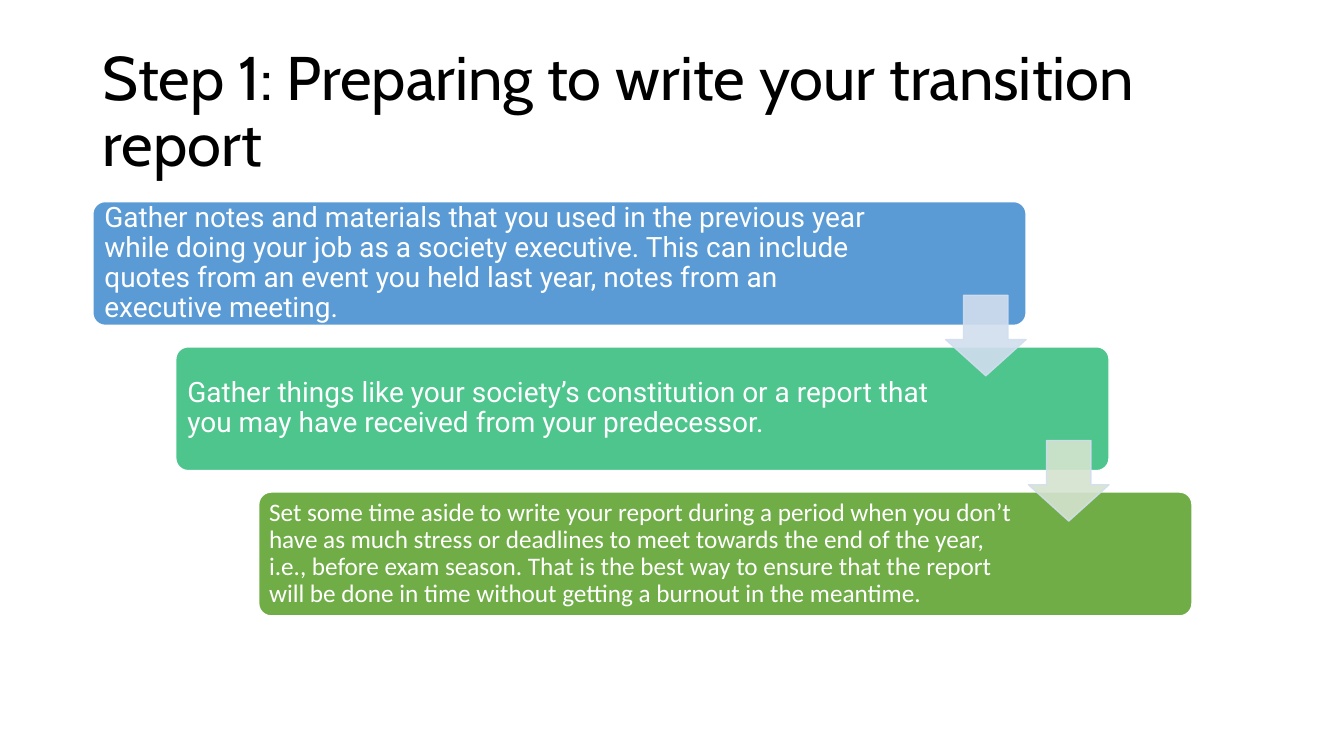
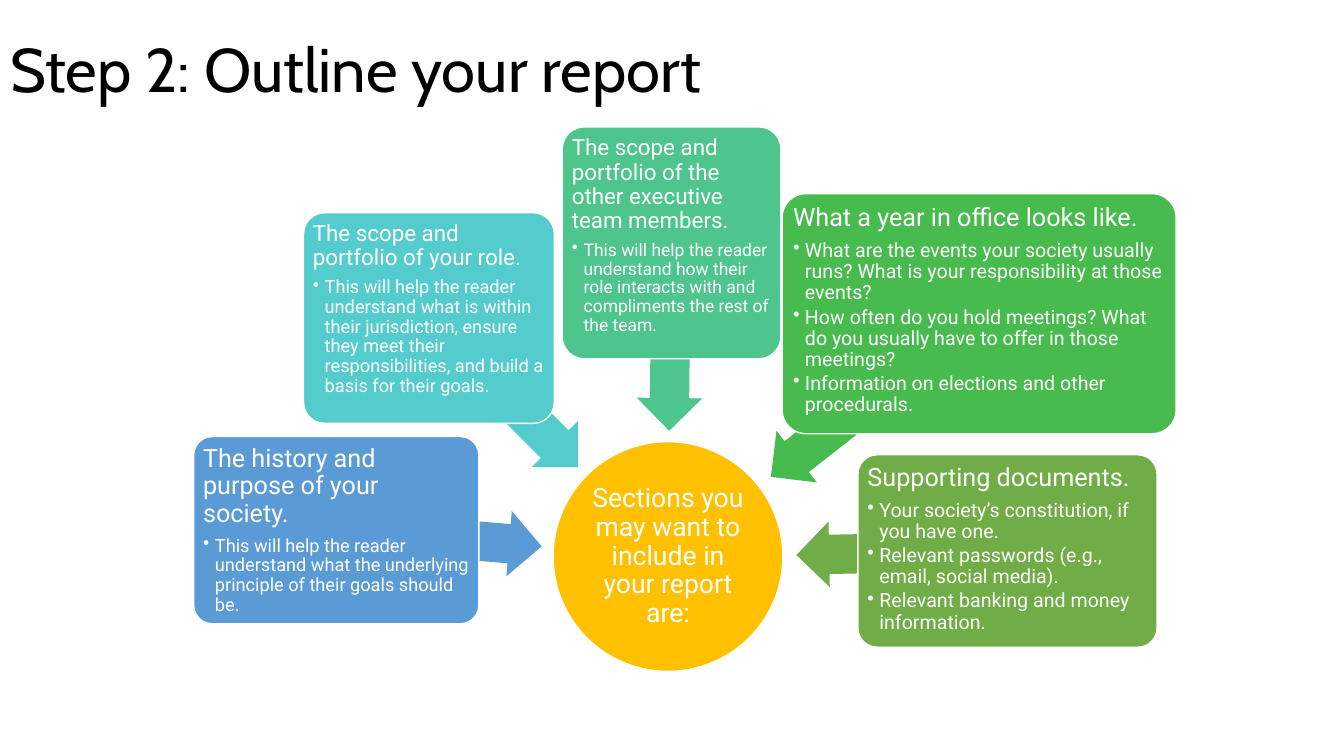
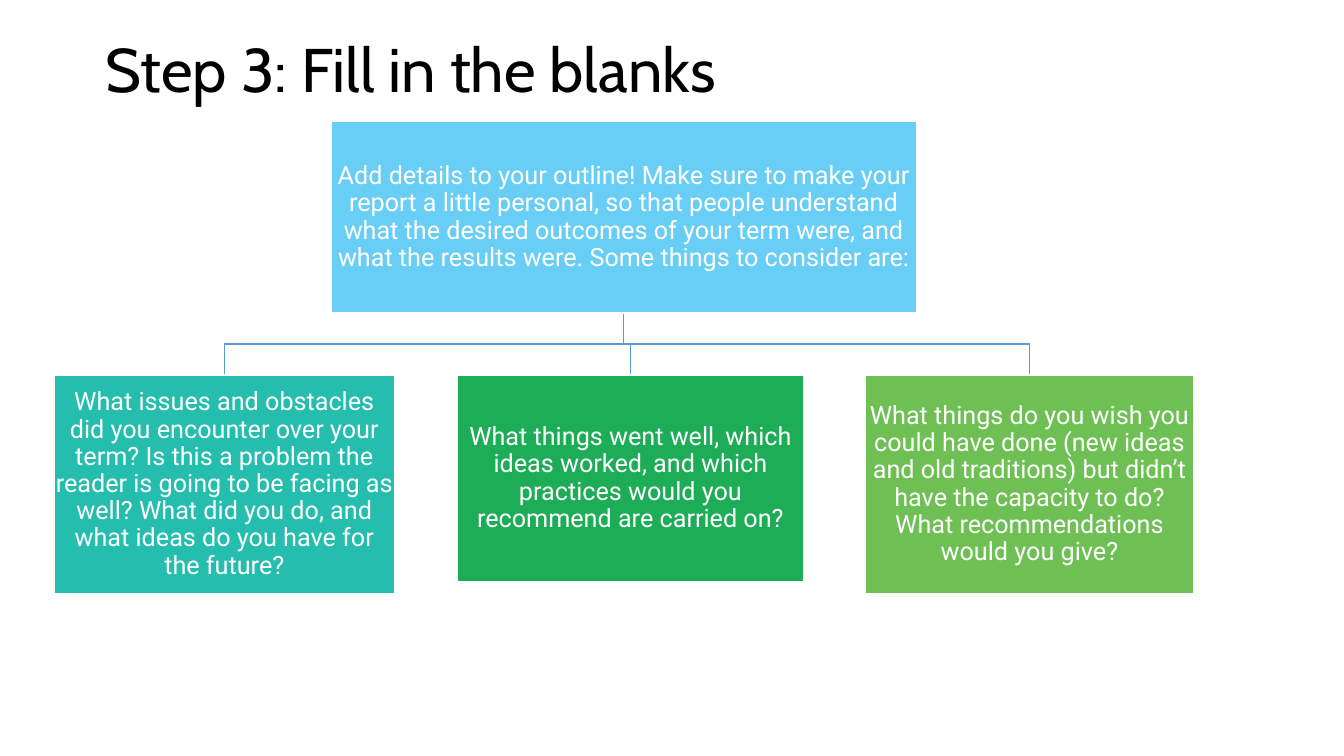
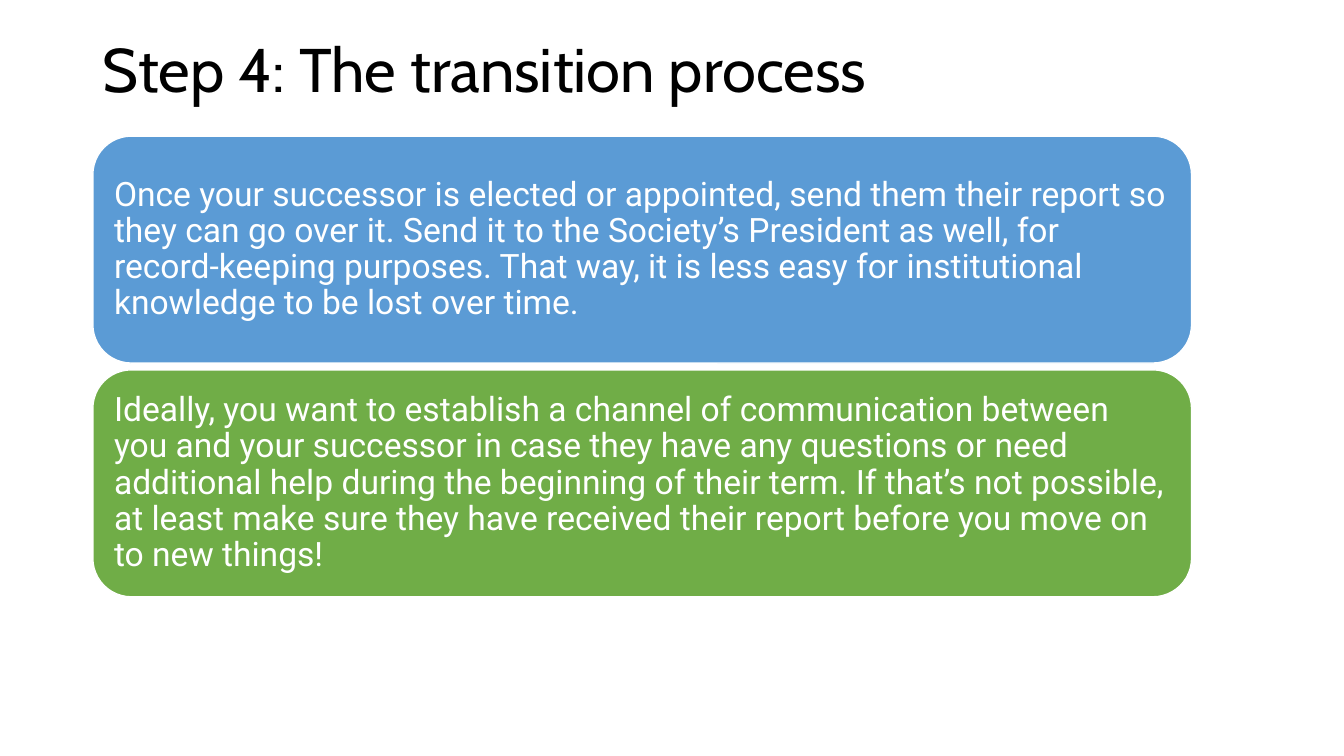
from dataclasses import dataclass
from typing import Any

from lxml import etree
from pptx import Presentation
from pptx.dml.color import RGBColor
from pptx.enum import shapes, text
from pptx.oxml import ns
from pptx.util import Cm, Pt

# Shared colours, fonts and formats
WHITE = RGBColor(0xFF, 0xFF, 0xFF)
BLACK = RGBColor(0x00, 0x00, 0x00)
BLUE = RGBColor(0x5B, 0x9B, 0xD5)
CYAN = RGBColor(0x54, 0xCC, 0xCD)
MINT = RGBColor(0x4D, 0xC5, 0x8D)
GREEN = RGBColor(0x48, 0xBB, 0x4F)
OLIVE = RGBColor(0x70, 0xAD, 0x47)
GOLD = RGBColor(0xFF, 0xC0, 0x00)
SKY = RGBColor(0x69, 0xCE, 0xF6)
TEAL = RGBColor(0x25, 0xBD, 0xAD)
LEAF = RGBColor(0x1D, 0xAD, 0x57)
LIME = RGBColor(0x6F, 0xC0, 0x54)
PALE = RGBColor(0xD2, 0xDE, 0xEF)
SAGE = RGBColor(0xD5, 0xE3, 0xCF)

HEAD, BODY, PLAIN = "Cabin", "Roboto", "Calibri"
KIND = shapes.MSO_SHAPE
LEFT, MID = text.PP_ALIGN.LEFT, text.PP_ALIGN.CENTER
TOP, CORE = text.MSO_ANCHOR.TOP, text.MSO_ANCHOR.MIDDLE
EDGE, WIDE = 2.34, 27.69
SHARE = 0.9


@dataclass
class Box:
    """A filled shape with text; lengths in cm, sizes in points."""
    left: float
    top: float
    width: float
    height: float
    fill: RGBColor
    words: str
    size: float = 18
    kind: Any = KIND.ROUNDED_RECTANGLE
    round: float | None = 0.1
    font: str = BODY
    align: Any = LEFT
    anchor: Any = CORE
    inset: float = 0.1
    right: float | None = None
    edge: float = 1
    items: tuple[str, ...] = ()
    small: float = 14


@dataclass
class Arrow:
    """A block arrow without text; lengths in cm, turn in degrees."""
    left: float
    top: float
    width: float
    height: float
    fill: RGBColor
    kind: Any = KIND.LEFT_ARROW
    shape: tuple[float, float] = (0.6, 0.5)
    turn: float = 0


def put(obj: Any, **vals: Any) -> None:
    for name, val in vals.items():
        setattr(obj, name, val)


def fade(fill: Any) -> None:
    """Make a solid fill slightly transparent."""
    tone = fill._xPr.find(ns.qn("a:solidFill"))[0]
    etree.SubElement(tone, ns.qn("a:alpha"), val=str(int(SHARE * 100000)))


def dot(para: Any) -> None:
    """Give a paragraph a hanging bullet."""
    para.level = 1
    props = para._p.get_or_add_pPr()
    props.set("marL", str(Cm(0.3)))
    props.set("indent", str(-Cm(0.3)))
    etree.SubElement(props, ns.qn("a:buChar"), char="•")


def write(para: Any, words: str, size: float, font: str, align: Any,
          color: RGBColor, after: float) -> None:
    put(para, alignment=align, line_spacing=0.9, space_after=Pt(round(size * after, 1)))
    run = para.add_run()
    run.text = words
    put(run.font, name=font, size=Pt(size))
    run.font.color.rgb = color


def shape(slide: Any, item: Box | Arrow) -> Any:
    area = [Cm(v) for v in (item.left, item.top, item.width, item.height)]
    form = slide.shapes.add_shape(item.kind, *area)
    form.shadow.inherit = False
    form.fill.solid()
    form.fill.fore_color.rgb = item.fill
    return form


def draw_box(slide: Any, box: Box) -> None:
    form = shape(slide, box)
    if box.round is not None:
        form.adjustments[0] = box.round
    form.line.color.rgb = WHITE
    form.line.width = Pt(box.edge)
    frame = form.text_frame
    pad = Cm(box.inset)
    side = pad if box.right is None else Cm(box.right)
    put(frame, word_wrap=True, vertical_anchor=box.anchor, margin_left=pad,
        margin_top=pad, margin_bottom=pad, margin_right=side)
    write(frame.paragraphs[0], box.words, box.size, box.font, box.align, WHITE, 0.35)
    for item in box.items:
        para = frame.add_paragraph()
        dot(para)
        write(para, item, box.small, box.font, box.align, WHITE, 0.15)


def draw_arrow(slide: Any, arrow: Arrow) -> Any:
    form = shape(slide, arrow)
    form.adjustments[0], form.adjustments[1] = arrow.shape
    form.rotation = arrow.turn
    form.line.fill.background()
    return form


def draw_link(slide: Any, root: Box, leaf: Box) -> None:
    """Draw a stepped line from under one box to the top of another."""
    start, end = root.left + root.width / 2, leaf.left + leaf.width / 2
    base = root.top + root.height
    bend = (base + leaf.top) / 2
    pen = slide.shapes.build_freeform(Cm(start), Cm(base))
    steps = ((start, bend), (end, bend), (end, leaf.top))
    pen.add_line_segments([(Cm(x), Cm(y)) for x, y in steps], close=False)
    form = pen.convert_to_shape()
    form.shadow.inherit = False
    form.fill.background()
    form.line.color.rgb = BLUE
    form.line.width = Pt(1)


def add_slide(deck: Any, words: str, left: float = EDGE, top: float = 0) -> Any:
    slide = deck.slides.add_slide(deck.slide_layouts[5])
    title = slide.shapes.title
    put(title, left=Cm(left), top=Cm(top), width=Cm(WIDE), height=Cm(3.68))
    put(title.text_frame, word_wrap=True, vertical_anchor=CORE,
        auto_size=text.MSO_AUTO_SIZE.NONE)
    write(title.text_frame.paragraphs[0], words, 44, HEAD, LEFT, BLACK, 0)
    return slide


def prepare(deck: Any) -> None:
    slide = add_slide(deck, "Step 1: Preparing to write your transition report", top=1.02)
    steps = (
        (BLUE, 20, BODY, 0.2, 3.4,
         "Gather notes and materials that you used in the previous year while doing your "
         "job as a society executive. This can include quotes from an event you held last "
         "year, notes from an executive meeting."),
        (MINT, 20, BODY, 0.2, 4.3,
         "Gather things like your society’s constitution or a report that you may have "
         "received from your predecessor."),
        (OLIVE, 18, PLAIN, 0.17, 4.27,
         "Set some time aside to write your report during a period when you don’t have as "
         "much stress or deadlines to meet towards the end of the year, i.e., before exam "
         "season. That is the best way to ensure that the report will be done in time "
         "without getting a burnout in the meantime."),
    )
    across, down = 2.09, 3.66
    for i, (fill, size, font, inset, right, words) in enumerate(steps):
        draw_box(slide, Box(EDGE + i * across, 5.08 + i * down, 23.52, 3.12, fill, words,
                            size, font=font, inset=inset, right=right))
    # Arrows from each step to the next
    for i, fill in enumerate((PALE, SAGE)):
        form = draw_arrow(slide, Arrow(23.83 + i * across, 7.44 + i * down, 2.03, 2.03,
                                       fill, KIND.DOWN_ARROW, (0.55, 0.45)))
        form.line.color.rgb = PALE
        form.line.width = Pt(1)
        fade(form.fill)
        fade(form.line.fill)


def outline(deck: Any) -> None:
    slide = add_slide(deck, "Step 2: Outline your report", left=0)
    draw_box(slide, Box(13.94, 11.13, 5.79, 5.79, GOLD,
                        "Sections you may want to include in your report are:", 19,
                        KIND.OVAL, None, align=MID, inset=0.03))
    # Each section with its arrow to the centre
    parts = (
        (Arrow(8.48, 12.73, 5.18, 1.65, BLUE, turn=184.7),
         Box(4.88, 11, 7.19, 4.72, BLUE, "The history and purpose of your society.",
             small=13, items=(
                 "This will help the reader understand what the underlying principle of "
                 "their goals should be.",))),
        (Arrow(10.03, 9.07, 5.31, 1.65, CYAN, turn=225),
         Box(7.65, 5.36, 6.32, 5.31, CYAN, "The scope and portfolio of your role.", 16,
             inset=0.08, small=13, items=(
                 "This will help the reader understand what is within their jurisdiction, "
                 "ensure they meet their responsibilities, and build a basis for their "
                 "goals.",))),
        (Arrow(14.53, 7.67, 4.72, 1.65, MINT, turn=270.6),
         Box(14.17, 3.2, 5.51, 5.84, MINT,
             "The scope and portfolio of the other executive team members.", 16,
             inset=0.08, small=12.5, items=(
                 "This will help the reader understand how their role interacts with and "
                 "compliments the rest of the team.",))),
        (Arrow(18.72, 9.14, 6.65, 1.65, GREEN, turn=321.9),
         Box(19.71, 4.88, 9.93, 6.05, GREEN, "What a year in office looks like.", items=(
             "What are the events your society usually runs? What is your responsibility "
             "at those events?",
             "How often do you hold meetings? What do you usually have to offer in those "
             "meetings?",
             "Information on elections and other procedurals."))),
        (Arrow(20.07, 13.11, 5.31, 1.65, OLIVE, turn=358.9),
         Box(21.62, 11.46, 7.54, 4.85, OLIVE, "Supporting documents.", items=(
             "Your society’s constitution, if you have one.",
             "Relevant passwords (e.g., email, social media).",
             "Relevant banking and money information."))),
    )
    for arrow, box in parts:
        draw_arrow(slide, arrow)
        box.anchor = TOP
        draw_box(slide, box)


def fill_in(deck: Any) -> None:
    slide = add_slide(deck, "Step 3: Fill in the blanks", left=2.41)
    style = dict(kind=KIND.RECTANGLE, round=None, align=MID, inset=0.03, edge=1.5)
    root = Box(8.33, 3.05, 14.78, 4.85, SKY,
               "Add details to your outline! Make sure to make your report a little "
               "personal, so that people understand what the desired outcomes of your term "
               "were, and what the results were. Some things to consider are:", **style)
    row = 9.45
    leaves = (
        Box(1.35, row, 8.61, 5.51, TEAL,
            "What issues and obstacles did you encounter over your term? Is this a problem "
            "the reader is going to be facing as well? What did you do, and what ideas do "
            "you have for the future?", **style),
        Box(11.51, row, 8.76, 5.21, LEAF,
            "What things went well, which ideas worked, and which practices would you "
            "recommend are carried on?", **style),
        Box(21.79, row, 8.31, 5.51, LIME,
            "What things do you wish you could have done (new ideas and old traditions) but "
            "didn’t have the capacity to do? What recommendations would you give?", **style),
    )
    for leaf in leaves:
        draw_link(slide, root, leaf)
    for box in (root, *leaves):
        draw_box(slide, box)


def hand_on(deck: Any) -> None:
    slide = add_slide(deck, "Step 4: The transition process")
    notes = (
        (BLUE,
         "Once your successor is elected or appointed, send them their report so they can "
         "go over it. Send it to the Society’s President as well, for record-keeping "
         "purposes. That way, it is less easy for institutional knowledge to be lost over "
         "time."),
        (OLIVE,
         "Ideally, you want to establish a channel of communication between you and your "
         "successor in case they have any questions or need additional help during the "
         "beginning of their term. If that’s not possible, at least make sure they have "
         "received their report before you move on to new things!"),
    )
    for i, (fill, words) in enumerate(notes):
        draw_box(slide, Box(EDGE, 3.43 + i * 5.89, WIDE, 5.72, fill, words, 24,
                            round=0.17, inset=0.25))


def main() -> None:
    deck = Presentation()
    put(deck, slide_width=Cm(33.87), slide_height=Cm(19.05))
    for build in (prepare, outline, fill_in, hand_on):
        build(deck)
    deck.save("out.pptx")


if __name__ == "__main__":
    main()
